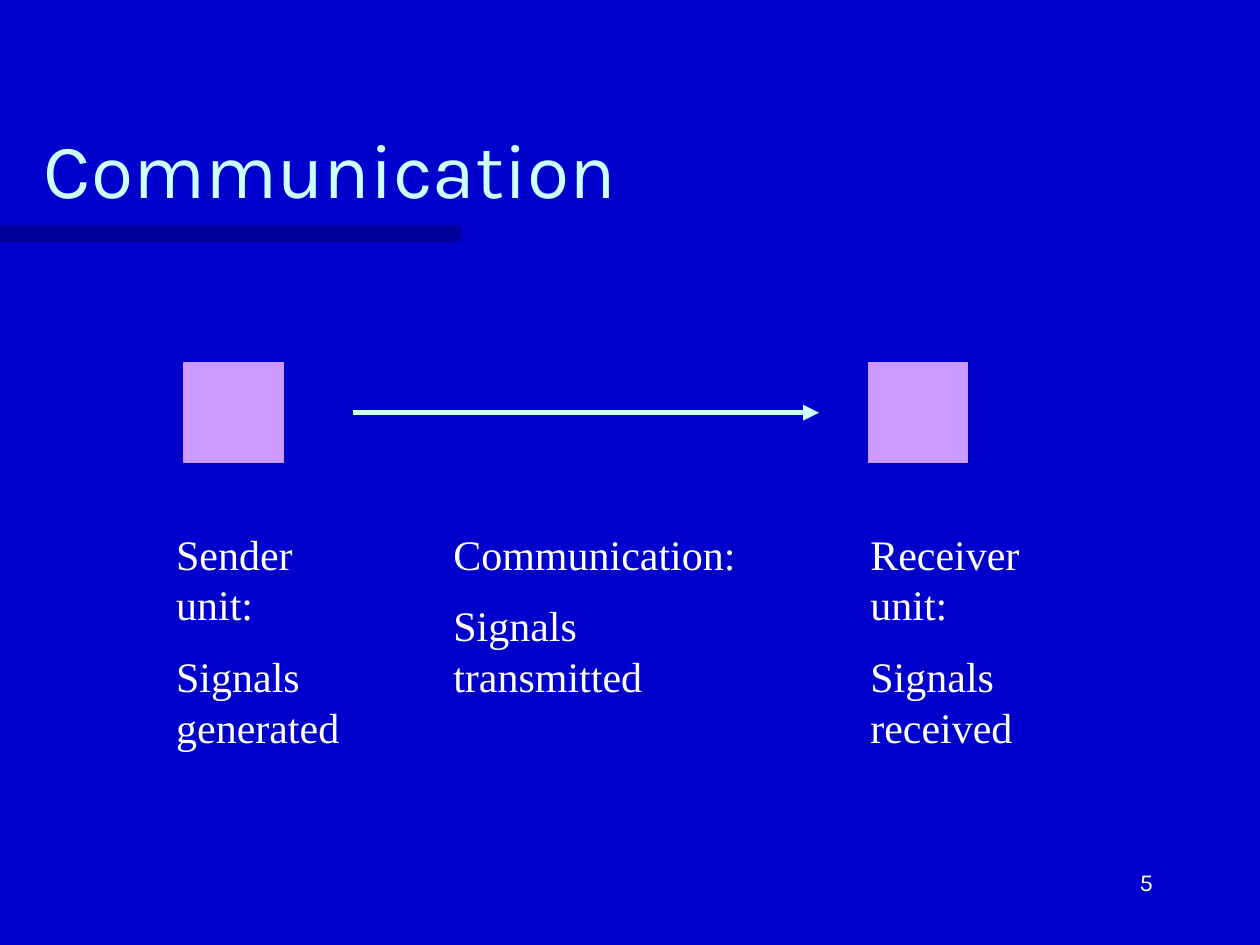
"""Build the Communication slide: a sender, an arrow and a receiver with captions."""
from lxml.etree import SubElement
from pptx import Presentation
from pptx.dml.color import RGBColor
from pptx.enum.shapes import MSO_CONNECTOR as Connector, MSO_SHAPE as Shape
from pptx.enum.text import MSO_ANCHOR as Anchor, PP_ALIGN as Align
from pptx.oxml.ns import qn
from pptx.util import Inches, Pt

THEME = {
    "background": "0000CC", "bar": "000066", "accent": "CCFFFF",
    "unit": "CC99FF", "text": "FFFFFF",
    "heading_font": "Karla", "body_font": "Times New Roman",
    "title_size": 44, "body_size": 24, "number_size": 14,
    "body_leading": 29, "body_gap": 12,
}
TITLE = "Communication"
PAGE_NUMBER = "5"
CAPTIONS = [
    (1.3, 1.73, 1.9, ["Sender unit:", "Signals generated"]),
    (6.81, 1.73, 1.9, ["Receiver unit:", "Signals received"]),
    (3.5, 2.44, 1.5, ["Communication:", "Signals transmitted"]),
]
CAPTION_TOP = 4.14
UNIT_LEFTS = [1.46, 6.89]
UNIT_TOP, UNIT_SIDE = 2.88, 0.79
ARROW_LEFT, ARROW_RIGHT = 2.8, 6.5


def color(name):
    """Return a theme colour."""
    return RGBColor.from_string(THEME[name])


def add_rectangle(page, area, fill):
    """Add a plain filled rectangle."""
    box = page.shapes.add_shape(Shape.RECTANGLE, *map(Inches, area))
    box.shadow.inherit = False
    box.fill.solid()
    box.fill.fore_color.rgb = color(fill)
    box.line.fill.background()
    return box


def add_text(page, area, lines, role, font, ink="text"):
    """Add a wrapping text box with one paragraph per line."""
    frame = page.shapes.add_textbox(*map(Inches, area)).text_frame
    frame.word_wrap = True
    frame.text = "\n".join(lines)
    for para in frame.paragraphs:
        for span in para.runs:
            span.font.name = THEME[font]
            span.font.size = Pt(THEME[role + "_size"])
            span.font.color.rgb = color(ink)
    return frame


def add_arrow(page, left, right, level):
    """Add a horizontal arrow pointing right."""
    arrow = page.shapes.add_connector(
        Connector.STRAIGHT, *map(Inches, (left, level, right, level)))
    arrow.line.color.rgb = color("accent")
    arrow.line.width = Pt(3)
    SubElement(arrow.line._get_or_add_ln(), qn("a:tailEnd"), type="triangle")
    SubElement(arrow._element.spPr, qn("a:effectLst"))


def main():
    """Assemble and save the deck."""
    deck = Presentation()
    deck.slide_width, deck.slide_height = Inches(10), Inches(7.5)
    page = deck.slides.add_slide(deck.slide_layouts[6])
    page.background.fill.solid()
    page.background.fill.fore_color.rgb = color("background")

    bar = add_rectangle(page, (0, 1.79, 3.66, 0.13), "bar")
    bar_color = bar._element.spPr.find(qn("a:solidFill"))[0]
    SubElement(bar_color, qn("a:alpha"), val="50000")

    number = add_text(page, (7.17, 6.83, 2.08, 0.5), [PAGE_NUMBER], "number", "heading_font")
    number.paragraphs[0].alignment = Align.RIGHT
    title = add_text(page, (0.25, 0.5, 8.5, 1.25), [TITLE], "title", "heading_font", "accent")
    title.vertical_anchor = Anchor.BOTTOM

    for left in UNIT_LEFTS:
        unit = add_rectangle(page, (left, UNIT_TOP, UNIT_SIDE, UNIT_SIDE), "unit")
        unit.line.color.rgb = color("unit")
        unit.line.width = Pt(0.75)
    add_arrow(page, ARROW_LEFT, ARROW_RIGHT, UNIT_TOP + UNIT_SIDE / 2)

    for left, width, height, lines in CAPTIONS:
        caption = add_text(page, (left, CAPTION_TOP, width, height), lines, "body", "body_font")
        for para in caption.paragraphs:
            para.line_spacing = Pt(THEME["body_leading"])
        for para in caption.paragraphs[1:]:
            para.space_before = Pt(THEME["body_gap"])

    deck.save("out.pptx")


if __name__ == "__main__":
    main()
